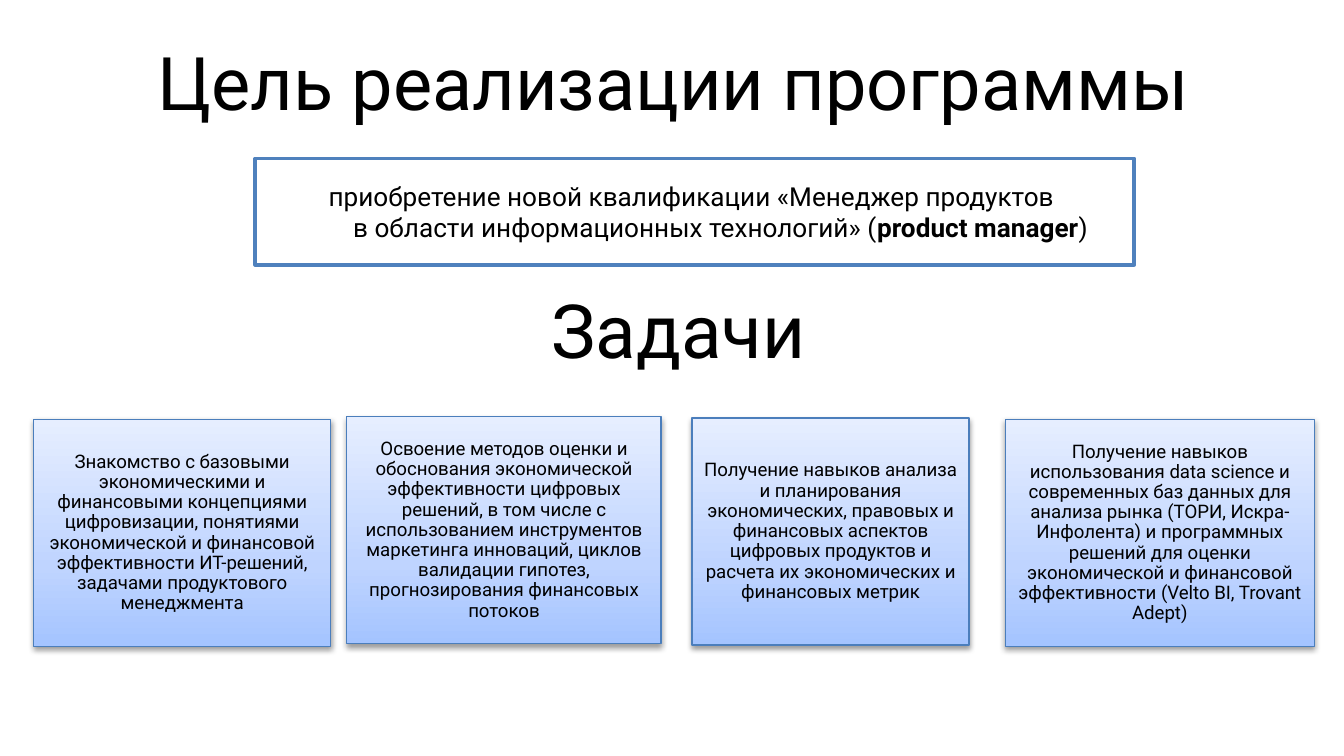
from dataclasses import dataclass

import pptx
import pptx.dml.color
import pptx.enum.shapes
import pptx.enum.text
import pptx.oxml
import pptx.oxml.ns
import pptx.util
from pptx.util import Inches


@dataclass(frozen=True)
class Theme:
    font: str = "Roboto"
    text: str = "000000"
    paper: str = "FFFFFF"
    goal_line: str = "4F81BD"
    card_line: str = "4B7EBC"
    card_stops: tuple = ((0, "A4C4FF"), (35, "BFD4FF"), (100, "E6EEFF"))
    heading_size: float = 40
    title_size: float = 39.6
    goal_size: float = 14
    card_size: float = 10


@dataclass(frozen=True)
class Box:
    left: float
    top: float
    width: float
    height: float

    def lengths(self) -> tuple:
        return tuple(Inches(v) for v in (self.left, self.top, self.width, self.height))


@dataclass(frozen=True)
class Card:
    left: float
    top: float
    width: float
    text: str


THEME = Theme()
SLIDE_WIDTH = 10
CARD_HEIGHT = 1.69
CARDS = (
    Card(0.25, 3.12, 2.21, "Знакомство с базовыми экономическими и финансовыми концепциями "
         "цифровизации, понятиями экономической и финансовой эффективности ИТ-решений, "
         "задачами продуктового менеджмента"),
    Card(2.58, 3.1, 2.34, "Освоение методов оценки и обоснования экономической эффективности "
         "цифровых решений, в том числе с использованием инструментов маркетинга инноваций, "
         "циклов валидации гипотез, прогнозирования финансовых потоков"),
    Card(5.15, 3.11, 2.06, "Получение навыков анализа и планирования экономических, правовых и "
         "финансовых аспектов цифровых продуктов и расчета их экономических и финансовых метрик"),
    Card(7.48, 3.12, 2.3, "Получение навыков использования data science и современных баз данных "
         "для анализа рынка (ТОРИ, Искра-Инфолента) и программных решений для оценки "
         "экономической и финансовой эффективности (Velto BI, Trovant Adept)"),
)


def rgb(value: str) -> pptx.dml.color.RGBColor:
    return pptx.dml.color.RGBColor.from_string(value)


def write(sp, *lines, size: float, inset: float = 0.1, spacing: float = 1.0,
          hanging: float = 0) -> None:
    tf = sp.text_frame
    tf.word_wrap = True
    tf.vertical_anchor = pptx.enum.text.MSO_ANCHOR.MIDDLE
    tf.margin_left = tf.margin_right = Inches(inset)
    tf.margin_top = tf.margin_bottom = Inches(min(inset, 0.05))
    p = tf.paragraphs[0]
    p.alignment = pptx.enum.text.PP_ALIGN.CENTER
    p.line_spacing = spacing
    if hanging:
        pPr = p._p.get_or_add_pPr()
        pPr.set("marL", str(Inches(hanging)))
        pPr.set("indent", str(-Inches(hanging)))
    for i, line in enumerate(lines):
        if i:
            p.add_line_break()
        for text, bold in line:
            r = p.add_run()
            r.text = text
            r.font.name = THEME.font
            r.font.size = pptx.util.Pt(size)
            r.font.bold = bold
            r.font.color.rgb = rgb(THEME.text)


def add_heading(s, box: Box, text: str, size: float) -> None:
    write(s.shapes.add_textbox(*box.lengths()), [(text, False)], size=size)


def add_rect(s, box: Box, line: str, weight: float):
    sp = s.shapes.add_shape(pptx.enum.shapes.MSO_SHAPE.RECTANGLE, *box.lengths())
    sp.shadow.inherit = False
    sp.line.color.rgb = rgb(line)
    sp.line.width = pptx.util.Pt(weight)
    return sp


def add_card(s, card: Card) -> None:
    sp = add_rect(s, Box(card.left, card.top, card.width, CARD_HEIGHT), THEME.card_line, 0.75)
    sp.fill.gradient()
    sp.fill.gradient_angle = 90
    ns = pptx.oxml.ns.nsdecls("a")
    spPr = sp._element.spPr
    stops = spPr.find(".//" + pptx.oxml.ns.qn("a:gsLst"))
    for stop in list(stops):
        stops.remove(stop)
    for position, color in THEME.card_stops:
        stops.append(pptx.oxml.parse_xml(
            f'<a:gs {ns} pos="{position * 1000}"><a:srgbClr val="{color}"/></a:gs>'))
    spPr.find(pptx.oxml.ns.qn("a:effectLst")).append(pptx.oxml.parse_xml(
        f'<a:outerShdw {ns} blurRad="{pptx.util.Pt(3.1)}" dist="{pptx.util.Pt(1.6)}" '
        'dir="5400000" rotWithShape="0"><a:srgbClr val="000000">'
        '<a:alpha val="38000"/></a:srgbClr></a:outerShdw>'))
    write(sp, [(card.text, False)], size=THEME.card_size, inset=0.04, spacing=0.9)


def main() -> None:
    prs = pptx.Presentation()
    prs.slide_width = Inches(SLIDE_WIDTH)
    prs.slide_height = Inches(SLIDE_WIDTH * 9 / 16)
    s = prs.slides.add_slide(prs.slide_layouts[6])

    add_heading(s, Box(0.51, 0.29, 9, 0.62), "Цель реализации программы", THEME.title_size)
    goal = add_rect(s, Box(1.9, 1.18, 6.54, 0.79), THEME.goal_line, 2)
    goal.fill.solid()
    goal.fill.fore_color.rgb = rgb(THEME.paper)
    write(goal,
          [("приобретение новой квалификации «Менеджер продуктов ", False)],
          [("в области информационных технологий» (", False), ("product manager", True),
           (")", False)],
          size=THEME.goal_size, hanging=0.38)
    add_heading(s, Box(0.55, 2.09, 9, 0.71), "Задачи", THEME.heading_size)
    for card in CARDS:
        add_card(s, card)

    prs.save("out.pptx")


if __name__ == "__main__":
    main()
